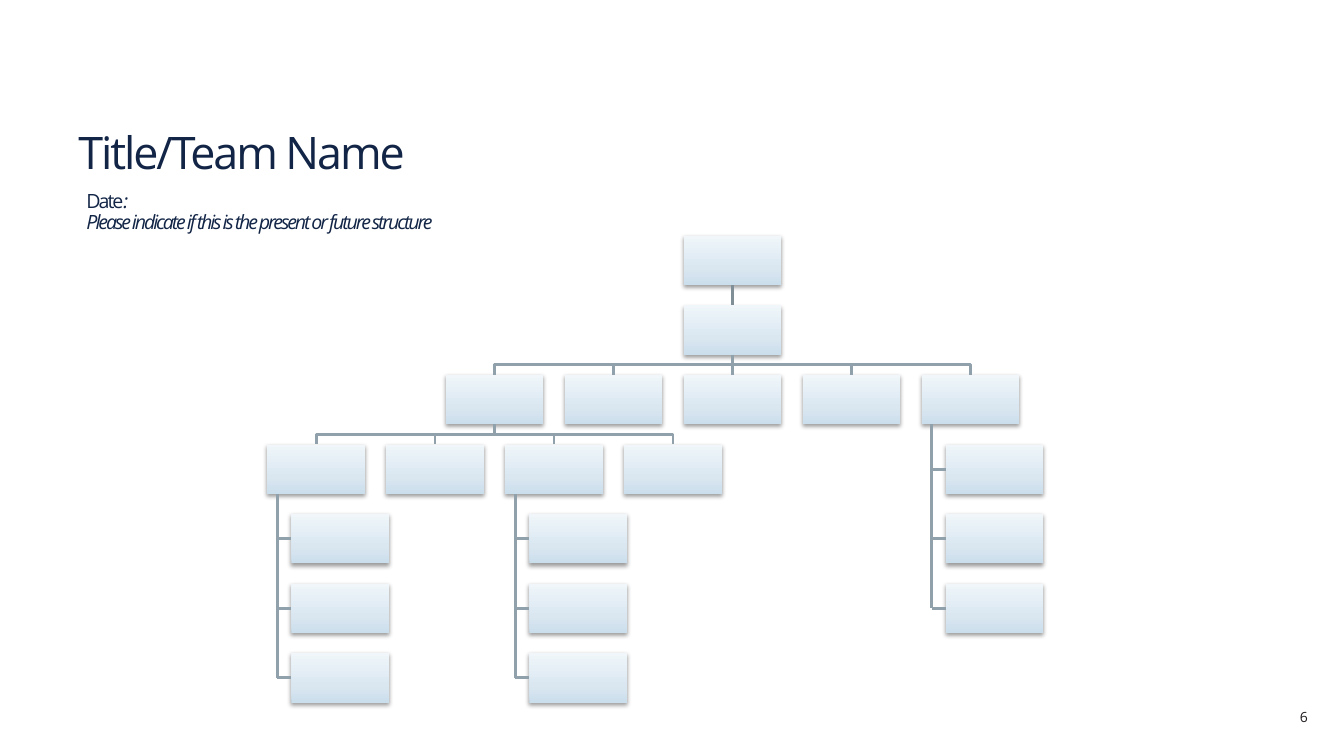
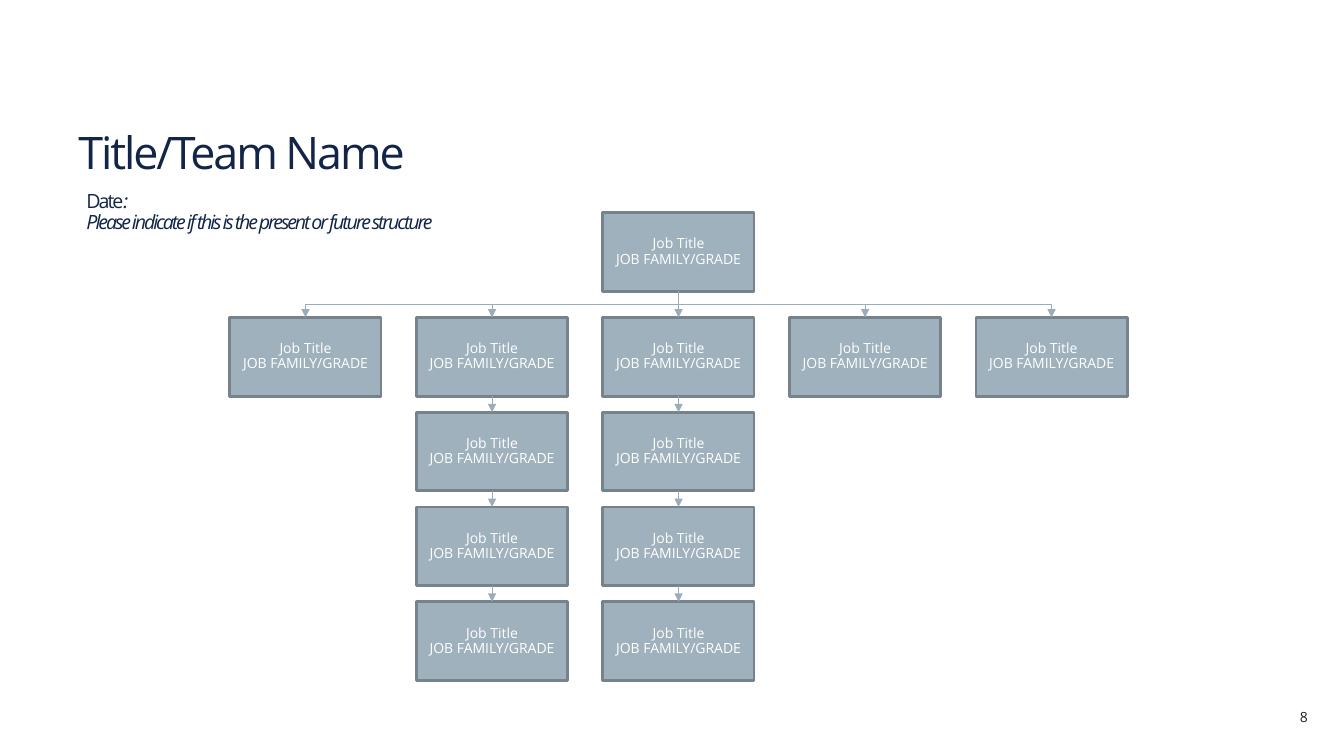
from lxml.etree import SubElement
from pptx import Presentation
from pptx.dml.color import RGBColor
from pptx.enum.shapes import MSO_CONNECTOR, MSO_SHAPE
from pptx.enum.text import MSO_ANCHOR, PP_ALIGN
from pptx.oxml import parse_xml
from pptx.oxml.ns import nsdecls, qn
from pptx.util import Inches, Pt

FONT = "Open Sans"
NAVY, INK, WHITE = "122546", "231F20", "FFFFFF"
BRANCH, STEM, ARROW = "90A1AC", "7F8E97", "9BADBA"
JOB_FILL, JOB_LINE = "9FB1BD", "76838C"
GRADIENT = f"""<a:gradFill {nsdecls('a')} rotWithShape="1"><a:gsLst>
<a:gs pos="0"><a:srgbClr val="CBDEEC"/></a:gs>
<a:gs pos="35000"><a:srgbClr val="DAE7F1"/></a:gs>
<a:gs pos="100000"><a:srgbClr val="F0F6FA"/></a:gs>
</a:gsLst><a:lin ang="16200000" scaled="1"/></a:gradFill>"""
SHADOW = f"""<a:effectLst {nsdecls('a')}>
<a:outerShdw blurRad="40000" dist="20000" dir="5400000" rotWithShape="0">
<a:srgbClr val="000000"><a:alpha val="38000"/></a:srgbClr>
</a:outerShdw></a:effectLst>"""


def style_text(text_frame, size, color, align=PP_ALIGN.LEFT, tracking=0):
    text_frame.word_wrap = True
    for paragraph in text_frame.paragraphs:
        paragraph.alignment = align
        paragraph.line_spacing = 0.9
        for run in paragraph.runs:
            run.font.name = FONT
            run.font.size = Pt(size)
            run.font.color.rgb = RGBColor.from_string(color)
            if tracking:
                run.font._element.set("spc", str(tracking))


def link(slide, start, end, color, width, arrow=False, end_side=0):
    joined = not isinstance(start, tuple)
    if joined:
        start_x, start_y = start.left + start.width // 2, start.top + start.height
    else:
        start_x, start_y = start
    if end_side == 1:
        end_x, end_y = end.left, end.top + end.height // 2
    else:
        end_x, end_y = end.left + end.width // 2, end.top
    bent = joined and abs(end_x - start_x) > Inches(0.05)
    kind = MSO_CONNECTOR.ELBOW if bent else MSO_CONNECTOR.STRAIGHT
    connector = slide.shapes.add_connector(kind, start_x, start_y, end_x, end_y)
    if joined:
        connector.begin_connect(start, 2)
    connector.end_connect(end, end_side)
    if bent:
        across, down = abs(end_x - start_x), end_y - start_y
        connector.left = (start_x + end_x - down) // 2
        connector.top = (start_y + end_y - across) // 2
        connector.width, connector.height = down, across
        frame = connector._element.spPr.find(qn("a:xfrm"))
        to_right = end_x > start_x
        frame.set("rot", "16200000" if to_right else "5400000")
        frame.set("flipH", "1" if to_right else "0")
    connector.line.color.rgb = RGBColor.from_string(color)
    connector.line.width = Pt(width)
    if arrow:
        SubElement(connector.line._get_or_add_ln(), qn("a:tailEnd"), type="triangle")
    SubElement(connector._element.spPr, qn("a:effectLst"))


presentation = Presentation()
presentation.slide_width, presentation.slide_height = Inches(13.33), Inches(7.5)

slides = []
for page in (6, 8):
    slide = presentation.slides.add_slide(presentation.slide_layouts[6])
    slides.append(slide)

    number = slide.shapes.add_textbox(Inches(12.02), Inches(7), Inches(1.05), Inches(0.27))
    number.text_frame.text = str(page)
    style_text(number.text_frame, 10, INK, PP_ALIGN.RIGHT)

    title = slide.shapes.add_textbox(Inches(0.68), Inches(0.76), Inches(11.86), Inches(1.02))
    title.text_frame.text = "Title/Team Name"
    title.text_frame.vertical_anchor = MSO_ANCHOR.BOTTOM
    title.text_frame.margin_bottom = 0
    style_text(title.text_frame, 32, NAVY, tracking=-150)

    note = slide.shapes.add_textbox(Inches(0.76), Inches(1.85), Inches(10.84), Inches(0.57))
    note.text_frame.text = "Date\nPlease indicate if this is the present or future structure"
    date_line, structure_line = note.text_frame.paragraphs
    colon = date_line.add_run()
    colon.text = ":"
    colon.font.italic = True
    structure_line.runs[0].font.italic = True
    style_text(note.text_frame, 14, NAVY, tracking=-150)

tree_slide, job_slide = slides

TREE_LEFT, TREE_TOP, TREE_COLUMN, TREE_ROW = 2.65, 2.34, 1.18, 0.69
BOX_WIDTH, BOX_HEIGHT, INDENT, TRUNK = 0.97, 0.49, 0.24, 0.1
hanging_parents = [(0, 3), (2, 3), (5.5, 2)]
cells = [(3.5, 0), (3.5, 1)]
cells += [(column + 1.5, 2) for column in range(5)]
cells += [(column, 3) for column in range(4)]
places = {cell: 0 for cell in cells}
for column, row in hanging_parents:
    for step in (1, 2, 3):
        places[column, row + step] = INDENT

boxes = {}
for (column, row), indent in places.items():
    box = tree_slide.shapes.add_shape(
        MSO_SHAPE.RECTANGLE,
        Inches(TREE_LEFT + column * TREE_COLUMN + indent),
        Inches(TREE_TOP + row * TREE_ROW),
        Inches(BOX_WIDTH),
        Inches(BOX_HEIGHT),
    )
    box.line.fill.background()
    properties = box._element.spPr
    properties.insert(2, parse_xml(GRADIENT))
    properties.append(parse_xml(SHADOW))
    boxes[column, row] = box

link(tree_slide, boxes[3.5, 0], boxes[3.5, 1], STEM, 2)
for column in range(5):
    link(tree_slide, boxes[3.5, 1], boxes[column + 1.5, 2], BRANCH, 2)
for column in range(4):
    link(tree_slide, boxes[1.5, 2], boxes[column, 3], BRANCH, 2)
for column, row in hanging_parents:
    parent, last = boxes[column, row], boxes[column, row + 3]
    trunk_x = parent.left + Inches(TRUNK)
    trunk = tree_slide.shapes.add_connector(
        MSO_CONNECTOR.STRAIGHT,
        trunk_x,
        parent.top + parent.height,
        trunk_x,
        last.top + last.height // 2,
    )
    trunk.line.color.rgb = RGBColor.from_string(BRANCH)
    trunk.line.width = Pt(2)
    SubElement(trunk._element.spPr, qn("a:effectLst"))
    for step in (1, 2, 3):
        child = boxes[column, row + step]
        branch_start = (trunk_x, child.top + child.height // 2)
        link(tree_slide, branch_start, child, BRANCH, 2, end_side=1)

JOB_LEFT, JOB_TOP, JOB_COLUMN, JOB_ROW = 2.28, 3.15, 1.85, 0.94
JOB_WIDTH, JOB_HEIGHT, LEAD_TOP = 1.5, 0.78, 2.11
job_cells = [(2, 0)] + [(column, 1) for column in range(5)]
job_cells += [(column, row) for column in (1, 2) for row in (2, 3, 4)]

jobs = {}
for column, row in job_cells:
    top = JOB_TOP + (row - 1) * JOB_ROW if row else LEAD_TOP
    job = job_slide.shapes.add_shape(
        MSO_SHAPE.RECTANGLE,
        Inches(JOB_LEFT + column * JOB_COLUMN),
        Inches(top),
        Inches(JOB_WIDTH),
        Inches(JOB_HEIGHT),
    )
    job.shadow.inherit = False
    job.fill.solid()
    job.fill.fore_color.rgb = RGBColor.from_string(JOB_FILL)
    job.line.color.rgb = RGBColor.from_string(JOB_LINE)
    job.line.width = Pt(2)
    job.text_frame.text = "Job Title\nJOB FAMILY/GRADE"
    job.text_frame.vertical_anchor = MSO_ANCHOR.MIDDLE
    style_text(job.text_frame, 10, WHITE, PP_ALIGN.CENTER)
    jobs[column, row] = job

for column, row in job_cells[1:]:
    parent = jobs[2, 0] if row == 1 else jobs[column, row - 1]
    link(job_slide, parent, jobs[column, row], ARROW, 0.75, arrow=True)

presentation.save("out.pptx")
